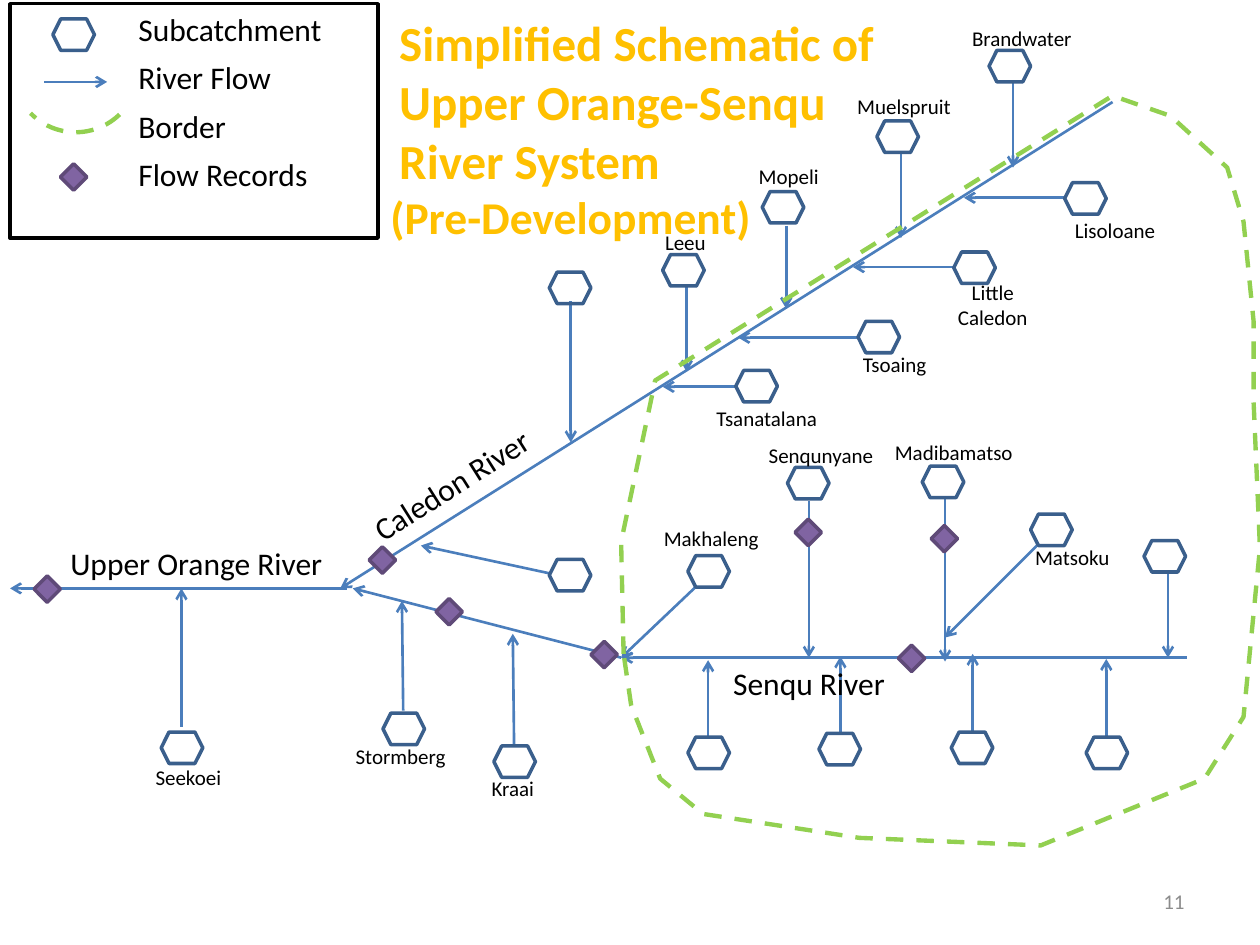
from dataclasses import dataclass

from lxml import etree
from pptx import Presentation
from pptx import util as u
from pptx.dml.color import RGBColor
from pptx.enum import dml, shapes, text
from pptx.oxml import ns

COLUMNS, ROWS = 100, 75
CELL = u.Inches(0.1)


@dataclass(frozen=True)
class Theme:
    font: str = "Calibri"
    ink: str = "000000"
    river: str = "4B7EBC"
    catchment: str = "3A5F8C"
    border: str = "92D050"
    record: str = "8064A2"
    record_edge: str = "5F4A78"
    title: str = "FFC000"
    number: str = "8C8C8C"
    small: int = 12
    body: int = 18
    subtitle: int = 26
    heading: int = 28


THEME = Theme()
CENTER, RIGHT = text.PP_ALIGN.CENTER, text.PP_ALIGN.RIGHT
HEXAGON = (3.3, 2.5)
DIAMOND = (2.1, 2.1)

# name, hexagon corner, arrow start, arrow tip, label box
TRIBUTARIES = [
    ("Seekoei", (12.8, 58.1), (14.4, 57.7), (14.4, 46.7), (11.2, 60.2, 7.5, 3)),
    ("Stormberg", (30.4, 56.6), (32, 56.4), (31.9, 47.7), (26.8, 58.5, 10, 3)),
    ("Kraai", (39.2, 59.2), (40.8, 59.1), (40.7, 50.3), (37.4, 61.1, 6.6, 3)),
    ("Makhaleng", (54.6, 44.1), (55.2, 46.6), (49.3, 52.2), (51.6, 41.2, 9.7, 3)),
    ("Senqunyane", (62.5, 37.1), (64.2, 39.8), (64.2, 52.2), (59.7, 34.6, 10.9, 3)),
    ("Madibamatso", (73.2, 37), (75, 39.6), (75, 52.5), (70, 34.4, 11.4, 3)),
    ("Matsoku", (81.8, 40.8), (82.3, 43.3), (75, 50.6), (80.5, 42.7, 9.2, 3)),
    ("Leeu", (52.6, 20.2), (54.5, 22.8), (54.5, 29.5), (50.4, 17.7, 8, 3)),
    ("Mopeli", (60.5, 15.2), (62.4, 17.9), (62.4, 24.5), (58.6, 12.5, 8, 3)),
    ("Muelspruit", (69.6, 9.6), (71.5, 12.2), (71.5, 18.9), (67, 6.9, 9.5, 3)),
    ("Brandwater", (78.5, 4), (80.4, 6.6), (80.4, 13.3), (76, 1.5, 10.2, 3)),
    ("Lisoloane", (84.5, 14.5), (84.5, 15.7), (76.5, 15.7), (84.3, 16.8, 8.4, 3)),
    ("Little Caledon", (75.7, 20), (75.7, 21.2), (67.7, 21.2), (74.6, 21.7, 8.4, 5)),
    ("Tsoaing", (68.1, 25.5), (68.1, 26.8), (58.6, 26.8), (65.9, 27.4, 10.2, 3)),
    ("Tsanatalana", (58.4, 29.4), (58.4, 30.7), (52.6, 30.7), (55.4, 31.7, 10.9, 3)),
    ("", (43.6, 21.6), (45.3, 23.9), (45.3, 35.1), None),
    ("", (43.6, 44.4), (43.6, 45.5), (33.4, 43.3), None),
    ("", (54.6, 58.5), (56.2, 58.6), (56.2, 52.4), None),
    ("", (65, 58.2), (66.7, 58.2), (66.7, 52.1), None),
    ("", (75.5, 58.1), (77.2, 58.1), (77.2, 51.9), None),
    ("", (86.2, 58.5), (87.8, 58.5), (87.8, 52.3), None),
    ("", (90.8, 42.9), (92.7, 45.5), (92.7, 52.2), None),
]
RIVERS = [
    ((88.3, 8.1), (27, 46.7)),
    ((27.5, 46.7), (0.8, 46.7)),
    ((49.3, 52.2), (28, 46.7)),
    ((94.2, 52.2), (49.3, 52.2)),
]
RIVER_NAMES = [
    ("Upper Orange River", (4.6, 42.7, 22.3, 4), 0),
    ("Senqu River", (57.2, 52.2, 14.2, 4), 0),
    ("Caledon River", (27.8, 36.4, 16.2, 4), 327.6),
]
BORDER = [
    (49.5, 51.9), (49.3, 43), (51.9, 30.7), (52, 30.2), (88.3, 7.6), (92.9, 9.2),
    (97.4, 13.3), (98.7, 17.6), (99.5, 25.5), (99.5, 31.9), (100, 43.5), (98.7, 56.9),
    (95.6, 61.8), (82.6, 67.1), (68.2, 66.5), (55.8, 64.6), (52.4, 61.8), (50.1, 56),
]
FLOW_RECORDS = [(63.1, 41.2), (73.9, 41.7), (71.3, 51.2), (29.3, 43.4),
                (2.7, 45.7), (46.9, 50.9), (34.6, 47.5)]


def cells(*counts):
    return [round(count * CELL) for count in counts]


def apply(target, values):
    for name, value in values.items():
        setattr(target, name, value)


def style_line(line, color, width, dashed=False):
    line.color.rgb = RGBColor.from_string(color)
    line.width = u.Pt(width)
    if dashed:
        line.dash_style = dml.MSO_LINE.DASH


def style_shape(shape, color, width=2, fill=None, dashed=False):
    shape.shadow.inherit = False
    if fill:
        shape.fill.solid()
        shape.fill.fore_color.rgb = RGBColor.from_string(fill)
    else:
        shape.fill.background()
    style_line(shape.line, color, width, dashed)


def add_preset(page, kind, box, color, rotation=0, **look):
    shape = page.shapes.add_shape(kind, *cells(*box))
    shape.rotation = rotation
    style_shape(shape, color, **look)


def add_catchment(page, corner):
    add_preset(page, shapes.MSO_SHAPE.HEXAGON, corner + HEXAGON, THEME.catchment)


def add_record(page, corner):
    add_preset(page, shapes.MSO_SHAPE.DIAMOND, corner + DIAMOND, THEME.record_edge,
               fill=THEME.record)


def add_flow(page, start, tip):
    flow = page.shapes.add_connector(shapes.MSO_CONNECTOR.STRAIGHT, *cells(*start, *tip))
    style_line(flow.line, THEME.river, 1.5)
    etree.SubElement(flow.line._get_or_add_ln(), ns.qn("a:tailEnd"), type="arrow")
    etree.SubElement(flow._element.spPr, ns.qn("a:effectLst"))


def add_text(page, lines, place, size, color=THEME.ink, bold=False, align=None,
             after=0, wrap=True, rotation=0, anchor=text.MSO_ANCHOR.TOP):
    box = page.shapes.add_textbox(*cells(*place))
    box.rotation = rotation
    frame = box.text_frame
    apply(frame, {"word_wrap": wrap, "vertical_anchor": anchor})
    for index, line in enumerate(lines):
        para = frame.add_paragraph() if index else frame.paragraphs[0]
        apply(para, {"alignment": align, "space_after": u.Pt(after)})
        span = para.add_run()
        span.text = line
        apply(span.font, {"name": THEME.font, "size": u.Pt(size), "bold": bold})
        span.font.color.rgb = RGBColor.from_string(color)


def add_legend(page):
    add_catchment(page, (4.2, 1.5))
    add_flow(page, (3.5, 6.5), (8.5, 6.5))
    add_preset(page, shapes.MSO_SHAPE.ARC, (1, 0.5, 10, 10), THEME.border,
               rotation=135.8, width=2.5, dashed=True)
    add_record(page, (4.8, 13))
    add_text(page, ["Subcatchment", "River Flow", "Border", "Flow Records"],
             (10, 0.3, 20.4, 15.7), THEME.body, after=6)
    add_preset(page, shapes.MSO_SHAPE.RECTANGLE, (0.8, 0.3, 29.2, 18.6), THEME.ink)


def add_border(page):
    start, *rest = [cells(*point) for point in BORDER]
    builder = page.shapes.build_freeform(*start)
    builder.add_line_segments(rest, close=True)
    style_shape(builder.convert_to_shape(), THEME.border, width=2.5, dashed=True)


def add_tributary(page, name, corner, start, tip, label):
    add_flow(page, start, tip)
    add_catchment(page, corner)
    if name:
        add_text(page, [name], label, THEME.small, align=CENTER)


def main():
    deck = Presentation()
    apply(deck, {"slide_width": COLUMNS * CELL, "slide_height": ROWS * CELL})
    page = deck.slides.add_slide(deck.slide_layouts[6])
    add_legend(page)
    for river in RIVERS:
        add_flow(page, *river)
    for tributary in TRIBUTARIES:
        add_tributary(page, *tributary)
    add_border(page)
    add_text(page, ["Simplified Schematic of Upper Orange-Senqu River System"],
             (30.7, 0.5, 40.1, 15.1), THEME.heading, THEME.title, bold=True)
    add_text(page, ["(Pre-Development)"], (30, 14.5, 40.1, 5.4),
             THEME.subtitle, THEME.title, bold=True)
    for name, place, rotation in RIVER_NAMES:
        add_text(page, [name], place, THEME.body, wrap=False, rotation=rotation)
    for corner in FLOW_RECORDS:
        add_record(page, corner)
    add_text(page, ["11"], (71.7, 69.5, 23.3, 4), THEME.small, THEME.number,
             align=RIGHT, anchor=text.MSO_ANCHOR.MIDDLE)
    deck.save("out.pptx")


if __name__ == "__main__":
    main()
